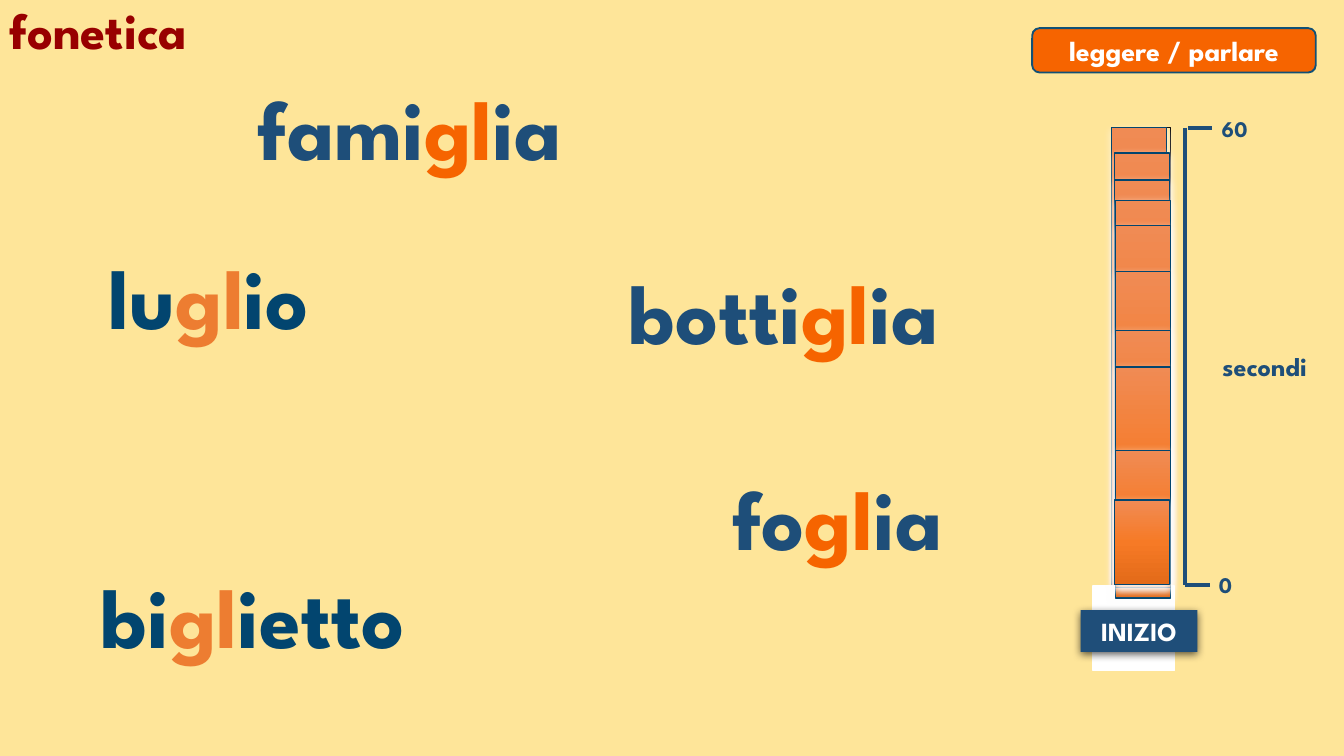
import pptx
import pptx.util
import pptx.dml.color
import pptx.enum.shapes
import pptx.enum.text
import pptx.oxml
import pptx.oxml.ns
from lxml import etree

RGB = pptx.dml.color.RGBColor
SHAPE = pptx.enum.shapes.MSO_SHAPE
ALIGN = pptx.enum.text.PP_ALIGN
ANCHOR = pptx.enum.text.MSO_ANCHOR
Pt = pptx.util.Pt
qn = pptx.oxml.ns.qn

PX = 9144  # 100 px to the inch
WIDE = 1000 * PX
HIGH = WIDE * 9 // 16
FONT = "League Spartan"

CREAM = RGB(0xFE, 0xE5, 0x99)
WHITE = RGB(0xFF, 0xFF, 0xFF)
BLACK = RGB(0x00, 0x00, 0x00)
RED = RGB(0x98, 0x00, 0x00)
BLUE = RGB(0x1E, 0x4E, 0x79)
NAVY = RGB(0x1F, 0x4E, 0x79)
TEAL = RGB(0x02, 0x45, 0x6F)
EDGE = RGB(0x11, 0x50, 0x76)
ORANGE = RGB(0xF6, 0x64, 0x00)
AMBER = RGB(0xED, 0x7D, 0x31)
HEAT = [(0, RGB(0xF0, 0x8B, 0x54)), (50, RGB(0xF6, 0x7A, 0x26)),
        (100, RGB(0xE3, 0x6A, 0x18))]


def place(box):
    return [n * PX for n in box]


def write(shape, runs, size, align=ALIGN.LEFT, anchor=ANCHOR.TOP):
    """Fill a shape with one line of (text, colour) runs."""
    frame = shape.text_frame
    form = dict(word_wrap=True, vertical_anchor=anchor, margin_left=7 * PX,
                margin_right=7 * PX, margin_top=4 * PX, margin_bottom=4 * PX)
    for key, value in form.items():
        setattr(frame, key, value)
    line = frame.paragraphs[0]
    line.alignment = align
    for text, color in runs:
        run = line.add_run()
        run.text = text
        for key, value in dict(name=FONT, size=Pt(size), bold=True).items():
            setattr(run.font, key, value)
        run.font.color.rgb = color


def label(slide, box, runs, size, align=ALIGN.LEFT):
    write(slide.shapes.add_textbox(*place(box)), runs, size, align)


def block(slide, box, fill=None, edge=None, width=0.75, kind=SHAPE.RECTANGLE):
    shape = slide.shapes.add_shape(kind, *place(box))
    shape.shadow.inherit = False
    if fill is None:
        shape.fill.background()
    else:
        shape.fill.solid()
        shape.fill.fore_color.rgb = fill
    if edge is None:
        shape.line.fill.background()
    else:
        shape.line.color.rgb = edge
        shape.line.width = Pt(width)
    return shape


def tint(parent, color, alpha=None):
    node = etree.SubElement(parent, qn("a:srgbClr"), val=str(color))
    if alpha:
        etree.SubElement(node, qn("a:alpha"), val=str(alpha * 1000))


def shade(shape, color):
    """Give a shape a soft shadow straight below it."""
    effects = shape._element.spPr.find(qn("a:effectLst"))
    node = etree.SubElement(effects, qn("a:outerShdw"), blurRad=str(Pt(4.5)),
                            dist=str(Pt(1.5)), dir="5400000", algn="bl",
                            rotWithShape="0")
    tint(node, color, 63)


def bar(slide, box):
    shape = block(slide, box, edge=TEAL)
    shape.fill.gradient()
    shape.fill.gradient_angle = 270
    stops = shape._element.spPr.find(qn("a:gradFill")).find(qn("a:gsLst"))
    for stop in list(stops):
        stops.remove(stop)
    for spot, color in HEAT:
        tint(etree.SubElement(stops, qn("a:gs"), pos=str(spot * 1000)), color)
    shade(shape, WHITE)


def rule(slide, x1, y1, x2, y2):
    line = slide.shapes.add_connector(
        pptx.enum.shapes.MSO_CONNECTOR.STRAIGHT, *place((x1, y1, x2, y2)))
    line.line.color.rgb = BLUE
    line.line.width = Pt(2.25)
    etree.SubElement(line._element.spPr, qn("a:effectLst"))


def head(slide, box):
    title = slide.shapes.title
    title.left, title.top, title.width, title.height = place(box)
    write(title, [("fonetica", RED)], 27, anchor=ANCHOR.MIDDLE)
    title.text_frame.paragraphs[0].line_spacing = 0.9


def badge(slide, box):
    shape = block(slide, box, ORANGE, EDGE, 1, SHAPE.ROUNDED_RECTANGLE)
    write(shape, [("leggere / parlare", WHITE)], 15, ALIGN.CENTER, ANCHOR.MIDDLE)


def word(slide, box, parts, ink, mark, align=ALIGN.LEFT):
    """A word whose middle part, the sound, is marked."""
    label(slide, box, list(zip(parts, (ink, mark, ink))), 45, align)


def timer(slide, x, y):
    """Scale, start button and stacked bars, from the tube's top left."""
    tall, wide = 341, 41
    block(slide, (x + 3, y, wide, tall), edge=BLACK)
    bar(slide, (x, y, wide, tall))

    # Scale
    axis, low = x + 55, y + 340
    rule(slide, axis + 2, y, axis + 20, y)
    label(slide, (axis + 20, y - 13, 35, 28), [("60", BLUE)], 12)
    rule(slide, axis, y, axis, low)
    label(slide, (axis, y + 162, 118, 30), [("secondi", BLUE)], 14, ALIGN.CENTER)
    rule(slide, axis, low, axis + 18, low)
    label(slide, (axis + 18, low - 14, 60, 28), [("0", BLUE)], 12)

    # Start button
    block(slide, (x - 14, y + tall, 61, 63), WHITE, WHITE, 1)
    start = block(slide, (x - 23, y + 359, 87, 31), NAVY)
    shade(start, BLACK)
    write(start, [("INIZIO", WHITE)], 14, ALIGN.CENTER, ANCHOR.MIDDLE)

    # Falling bars: shift, drop, height
    for shift, drop, high in [(2, 19, 317), (2, 39, 295), (3, 54, 295),
                              (3, 73, 275), (3, 107, 243), (3, 151, 191),
                              (3, 178, 162), (3, 240, 99), (2, 277, 63)]:
        bar(slide, (x + shift, y + drop, wide, high))


def main():
    deck = pptx.Presentation()
    deck.slide_width, deck.slide_height = WIDE, HIGH
    slide = deck.slides.add_slide(deck.slide_layouts[5])
    slide.background.fill.solid()
    slide.background.fill.fore_color.rgb = CREAM

    head(slide, (0, 2, 167, 45))
    badge(slide, (768, 21, 211, 33))

    # Words
    word(slide, (74, 179, 225, 83), ("lu", "gl", "io"), TEAL, AMBER)
    word(slide, (461, 190, 266, 83), ("botti", "gl", "ia"), BLUE, ORANGE)
    word(slide, (172, 53, 266, 83), ("fami", "gl", "ia"), BLUE, ORANGE, ALIGN.CENTER)
    word(slide, (68, 416, 391, 83), ("bi", "gl", "ietto"), TEAL, AMBER)
    word(slide, (530, 343, 186, 83), ("fo", "gl", "ia"), BLUE, ORANGE, ALIGN.CENTER)

    timer(slide, 827, 95)
    deck.save("out.pptx")


if __name__ == "__main__":
    main()
